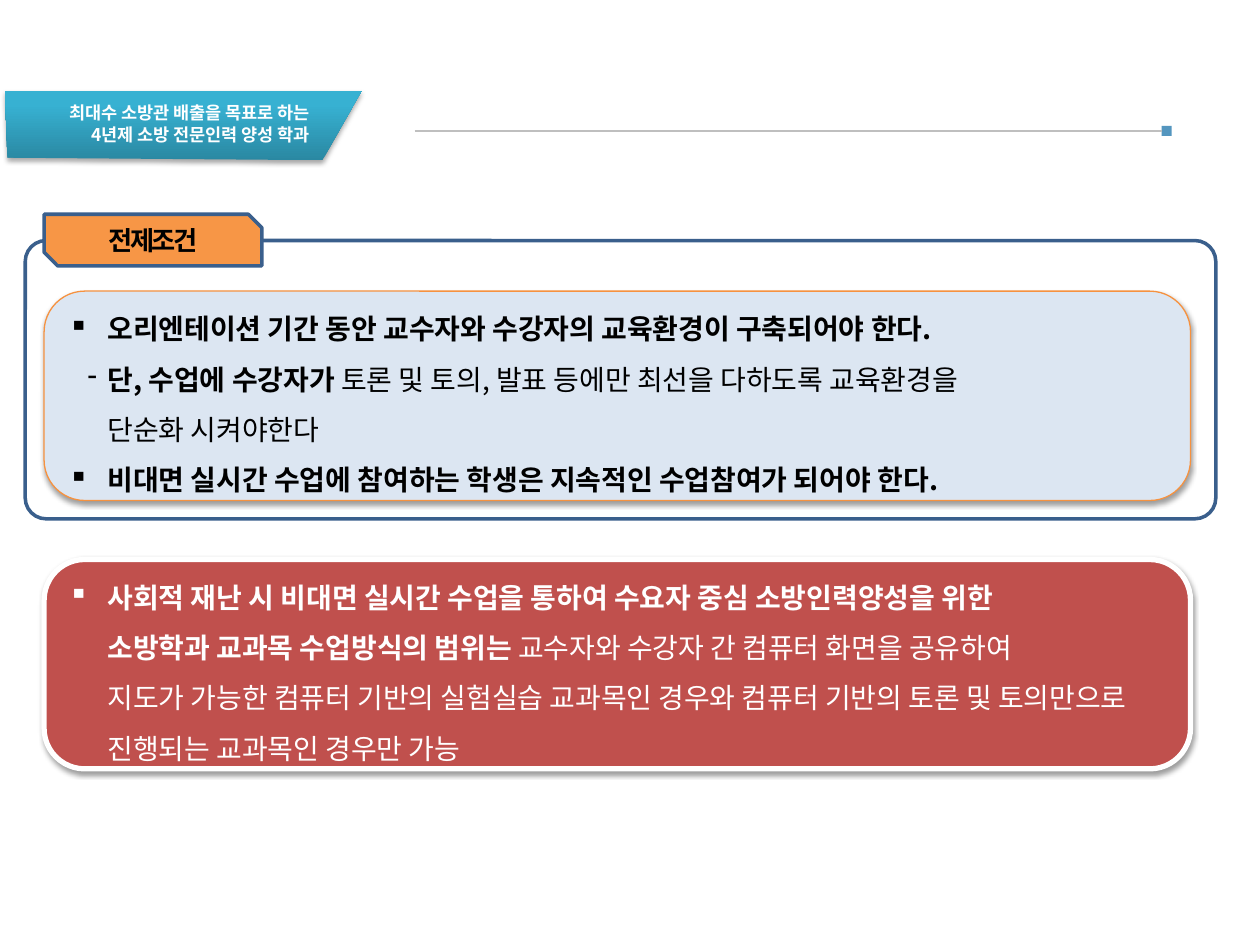
from lxml.etree import SubElement
from pptx import Presentation
from pptx.dml.color import RGBColor
from pptx.enum.shapes import MSO_CONNECTOR, MSO_SHAPE as Shape
from pptx.enum.text import MSO_ANCHOR as Anchor, MSO_AUTO_SIZE, PP_ALIGN as Align
from pptx.oxml.ns import qn
from pptx.util import Cm, Pt

FONT = "Noto Sans CJK KR"
COLORS = {
    "white": "FFFFFF", "black": "000000", "rule": "BFBFBF", "square": "5496BF",
    "teal_dark": "2A88A2", "teal": "37B1D2", "red": "C0504D", "navy": "3A5F8C",
    "orange": "F79646", "orange_line": "F69240", "pale_blue": "DCE6F2",
}


class SlideBuilder:
    def __init__(self, slide):
        self.slide = slide

    def color(self, name):
        return RGBColor.from_string(COLORS[name])

    def add_shadow(self, shape, opacity, distance):
        effects = shape._element.spPr.find(qn("a:effectLst"))
        shadow = SubElement(effects, qn("a:outerShdw"), blurRad=str(Pt(3.1)),
                            dist=str(Pt(distance)), dir="5400000", rotWithShape="0")
        black = SubElement(shadow, qn("a:srgbClr"), val=COLORS["black"])
        SubElement(black, qn("a:alpha"), val=str(opacity * 1000))

    def add_box(self, kind, box, fill=None, line=None, width=1, adjustments=()):
        shape = self.slide.shapes.add_shape(kind, *map(Cm, box))
        shape.shadow.inherit = False
        for index, value in enumerate(adjustments):
            shape.adjustments[index] = value
        if fill:
            shape.fill.solid()
            shape.fill.fore_color.rgb = self.color(fill)
        else:
            shape.fill.background()
        if line:
            shape.line.color.rgb = self.color(line)
            shape.line.width = Pt(width)
        else:
            shape.line.fill.background()
        return shape

    def add_panel(self, top, fill, line, width, text_color, items):
        panel = self.add_box(Shape.ROUNDED_RECTANGLE, (0.89, top, 23.11, 4.22),
                             fill, line, width, [0.194])
        self.add_shadow(panel, 38, 1.6)
        self.set_text(panel, items, 16, text_color, spacing=1.5)

    def add_rule(self, start, y, square_size):
        square = self.add_box(Shape.RECTANGLE,
                              (23.42, y - square_size / 2, square_size, square_size), "square")
        rule = self.slide.shapes.add_connector(
            MSO_CONNECTOR.STRAIGHT, Cm(start), Cm(y), Cm(23.42), Cm(y))
        rule.end_connect(square, 1)
        rule.line.color.rgb = self.color("rule")
        rule.line.width = Pt(0.75)
        SubElement(rule._element.spPr, qn("a:effectLst"))

    def add_banner(self, points):
        # Points are in hundredths of a centimetre
        builder = self.slide.shapes.build_freeform(*points[0], scale=Cm(0.01))
        builder.add_line_segments(points[1:], close=True)
        banner = builder.convert_to_shape()
        banner.shadow.inherit = False
        banner.line.fill.background()
        banner.fill.gradient()
        banner.fill.gradient_angle = 90
        for stop, name, position in zip(banner.fill.gradient_stops,
                                        ("teal_dark", "teal"), (0, 0.8)):
            stop.color.rgb = self.color(name)
            stop.position = position
        self.add_shadow(banner, 35, 1.8)

    def set_title(self, box, items):
        title = self.slide.shapes.title
        title.left, title.top, title.width, title.height = map(Cm, box)
        self.set_text(title, items, 10, "white", Align.RIGHT, spacing=1)
        # Bring the title in front of the banner
        self.slide.shapes._spTree.append(title._element)

    def set_text(self, shape, items, size, color, align=Align.LEFT, spacing=None, tracking=None):
        """Each item is (marker, bold text, regular text)."""
        frame = shape.text_frame
        frame.word_wrap = True
        frame.auto_size = MSO_AUTO_SIZE.NONE
        frame.vertical_anchor = Anchor.MIDDLE
        for index, (marker, *texts) in enumerate(items):
            paragraph = frame.add_paragraph() if index else frame.paragraphs[0]
            paragraph.alignment = align
            paragraph.line_spacing = spacing
            font = paragraph.font
            font.name, font.size, font.bold = FONT, Pt(size), True
            font.color.rgb = self.color(color)
            properties = font._element
            SubElement(properties, qn("a:ea"), typeface=FONT)
            if tracking:
                properties.set("spc", str(round(tracking * 100)))
            if marker:
                self.set_marker(paragraph, marker)
            for text, bold in zip(texts, (None, False)):
                for number, line in enumerate(text.split("\n")):
                    if number:
                        paragraph.add_line_break()
                    if line:
                        run = paragraph.add_run()
                        run.text = line
                        run.font.bold = bold

    def set_marker(self, paragraph, marker):
        properties = paragraph._p.get_or_add_pPr()
        hanging = 0.4 if marker == "-" else 0.79
        properties.set("marL", str(Cm(0.79)))
        properties.set("indent", str(-Cm(hanging)))
        bullet = SubElement(properties, qn("a:buChar"), char=marker)
        properties.find(qn("a:defRPr")).addprevious(bullet)


def main():
    presentation = Presentation()
    presentation.slide_width, presentation.slide_height = Cm(25.4), Cm(19.05)
    builder = SlideBuilder(presentation.slides.add_slide(presentation.slide_layouts[5]))

    # Header: rule and banner with the title
    builder.add_rule(8.36, 2.64, 0.2)
    builder.add_banner([(15, 318), (10, 183), (729, 183), (650, 323)])
    builder.set_title((-0.1, 1.93, 6.6, 1.12), [
        (None, "최대수 소방관 배출을 목표로 하는"),
        (None, "4년제 소방 전문인력 양성 학과"),
    ])

    # Scope of the teaching method
    builder.add_panel(11.28, "red", "white", 3, "white", [
        ("▪", "사회적 재난 시 비대면 실시간 수업을 통하여 수요자 중심 소방인력양성을 위한\n"
              "소방학과 교과목 수업방식의 범위는 ",
         "교수자와 수강자 간 컴퓨터 화면을 공유하여\n"
         "지도가 가능한 컴퓨터 기반의 실험실습 교과목인 경우와 컴퓨터 기반의 "
         "토론 및 토의만으로 진행되는 교과목인 경우만 가능"),
    ])

    # Preconditions: frame, label and list
    builder.add_box(Shape.ROUNDED_RECTANGLE, (0.51, 4.85, 24, 5.61),
                    line="navy", width=2, adjustments=[0.075])
    label = builder.add_box(Shape.SNIP_2_DIAG_RECTANGLE, (0.89, 4.32, 4.39, 1.04),
                            "orange", "navy", 2, [0, 0.262])
    builder.set_text(label, [(None, "전제조건")], 15, "black", Align.CENTER, tracking=-1.5)
    builder.add_panel(5.87, "pale_blue", "orange_line", 0.75, "black", [
        ("▪", "오리엔테이션 기간 동안 교수자와 수강자의 교육환경이 구축되어야 한다."),
        ("-", "단, 수업에 수강자가 ",
         "토론 및 토의, 발표 등에만 최선을 다하도록 교육환경을\n단순화 시켜야한다"),
        ("▪", "비대면 실시간 수업에 참여하는 학생은 지속적인 수업참여가 되어야 한다."),
    ])

    presentation.save("out.pptx")


if __name__ == "__main__":
    main()
